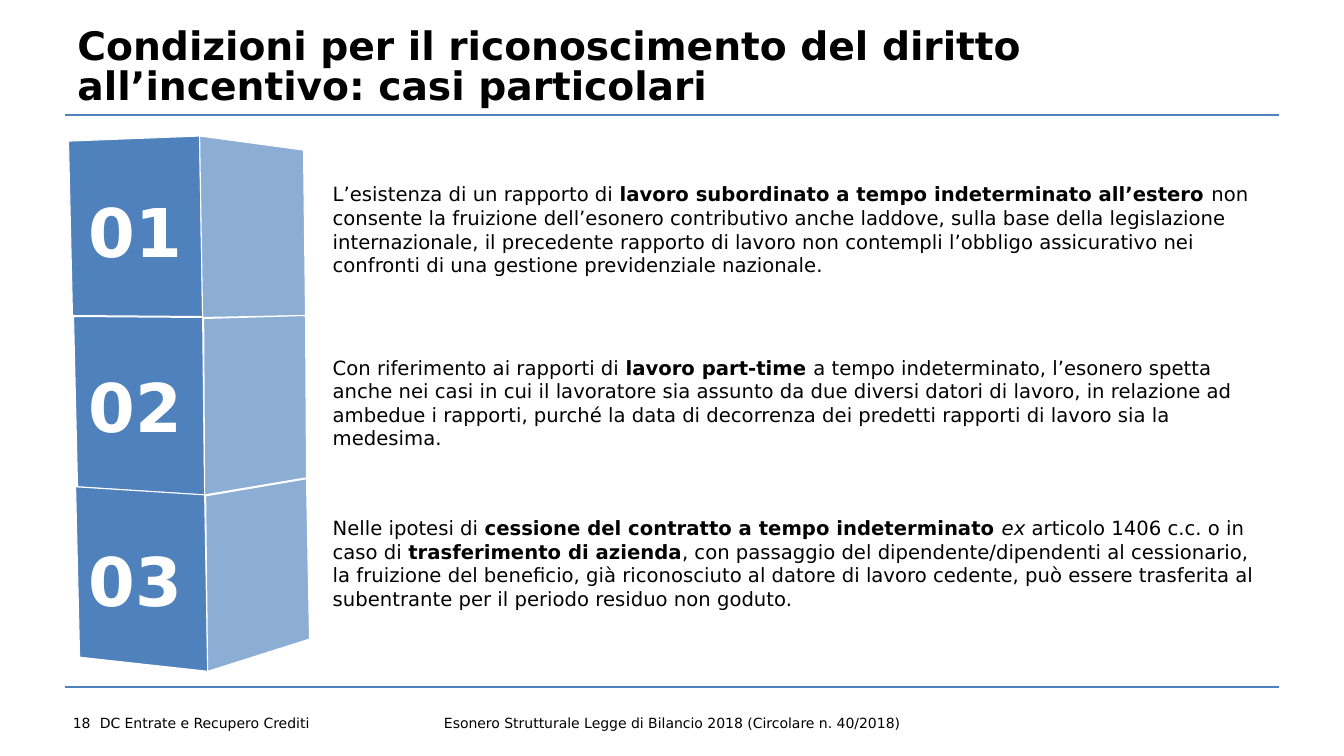
from lxml.etree import SubElement
from pptx import Presentation
from pptx.dml.color import RGBColor
from pptx.enum.shapes import MSO_CONNECTOR as Connector
from pptx.enum.text import MSO_ANCHOR as Anchor, PP_ALIGN as Align
from pptx.oxml.ns import qn
from pptx.util import Inches, Pt

BLUE = RGBColor(0x4F, 0x81, 0xBD)
LIGHT_BLUE = RGBColor(0x79, 0x9F, 0xCD)
WHITE = RGBColor(0xFF, 0xFF, 0xFF)
BLACK = RGBColor(0, 0, 0)
FONT = "DejaVu Sans"

BOLD = {"bold": True}
ITALIC = {"italic": True}

FRONT_FACES = [
    [(0.68, 1.4), (1.98, 1.35), (2.01, 3.14), (0.72, 3.13)],
    [(0.73, 3.14), (2.01, 3.15), (2.03, 4.91), (0.77, 4.83)],
    [(0.75, 4.83), (2.03, 4.91), (2.06, 6.66), (0.79, 6.52)],
]
SIDE_FACES = [
    [(1.98, 1.35), (3.01, 1.49), (3.03, 3.13), (2.01, 3.15)],
    [(2.03, 4.91), (3.04, 4.74), (3.03, 3.13), (2.02, 3.16)],
    [(2.04, 4.92), (3.04, 4.75), (3.07, 6.34), (2.06, 6.66)],
]
CASES = [
    (1.81, [
        ("L’esistenza di un rapporto di ", {}),
        ("lavoro subordinato a tempo indeterminato all’estero ", BOLD),
        ("non consente la fruizione dell’esonero contributivo anche laddove, "
         "sulla base della legislazione internazionale, il precedente rapporto "
         "di lavoro non contempli l’obbligo assicurativo nei confronti di una "
         "gestione previdenziale nazionale.", {}),
    ]),
    (3.53, [
        ("Con riferimento ai rapporti di ", {}),
        ("lavoro part-time ", BOLD),
        ("a tempo indeterminato, l’esonero spetta anche nei casi in cui il "
         "lavoratore sia assunto da due diversi datori di lavoro, in relazione "
         "ad ambedue i rapporti, purché la data di decorrenza dei predetti "
         "rapporti di lavoro sia la medesima.", {}),
    ]),
    (5.12, [
        ("Nelle ipotesi di ", {}),
        ("cessione del contratto a tempo indeterminato ", BOLD),
        ("ex ", ITALIC),
        ("articolo 1406 c.c. o in caso di ", {}),
        ("trasferimento di azienda", BOLD),
        (", con passaggio del dipendente/dipendenti al cessionario, la "
         "fruizione del beneficio, già riconosciuto al datore di lavoro "
         "cedente, può essere trasferita al subentrante per il periodo residuo "
         "non goduto.", {}),
    ]),
]
FOOTERS = [
    ("18", (0.67, 6.99, 0.28, 0.36), (0, 0), Align.CENTER),
    ("DC Entrate e Recupero Crediti", (0.95, 7.05, 3.07, 0.24),
     (0.04, 0.04), Align.LEFT),
    ("Esonero Strutturale Legge di Bilancio 2018 (Circolare n. 40/2018)",
     (4.3, 7.05, 4.73, 0.24), (0.04, 0.04), Align.CENTER),
]


def set_all(target, values):
    for name, value in values.items():
        setattr(target, name, value)


def add_text(slide, place, runs, size, color=BLACK, insets=(0, 0),
             paragraph_format=None, **frame_format):
    frame = slide.shapes.add_textbox(*map(Inches, place)).text_frame
    side, edge = map(Inches, insets)
    set_all(frame, {"word_wrap": True, "margin_left": side,
                    "margin_right": side, "margin_top": edge,
                    "margin_bottom": edge, **frame_format})
    paragraph = frame.paragraphs[0]
    set_all(paragraph, paragraph_format or {})
    for words, style in runs:
        run = paragraph.add_run()
        run.text = words
        set_all(run.font, {"name": FONT, "size": Pt(size), **style})
        run.font.color.rgb = color


def add_rule(slide, top):
    rule = slide.shapes.add_connector(
        Connector.STRAIGHT, Inches(0.64), Inches(top), Inches(12.69), Inches(top))
    rule.line.color.rgb = BLUE
    rule.line.width = Pt(1.5)
    SubElement(rule._element.spPr, qn("a:effectLst"))


def add_face(slide, corners, color, opacity=100):
    start, *others = [(Inches(x), Inches(y)) for x, y in corners]
    outline = slide.shapes.build_freeform(*start)
    outline.add_line_segments(others, close=True)
    face = outline.convert_to_shape()
    face.shadow.inherit = False
    face.fill.solid()
    face.fill.fore_color.rgb = color
    face.line.color.rgb = WHITE
    face.line.width = Pt(0.75)
    if opacity < 100:
        tint = face._element.spPr.find(qn("a:solidFill")).find(qn("a:srgbClr"))
        SubElement(tint, qn("a:alpha"), val=str(opacity * 1000))


def main():
    deck = Presentation()
    deck.slide_width, deck.slide_height = Inches(13.33), Inches(7.5)
    slide = deck.slides.add_slide(deck.slide_layouts[6])

    for top in (6.82, 1.14):
        add_rule(slide, top)
    for words, place, insets, alignment in FOOTERS:
        add_text(slide, place, [(words, {})], 10, insets=insets,
                 paragraph_format={"alignment": alignment},
                 vertical_anchor=Anchor.MIDDLE)

    for corners in FRONT_FACES:
        add_face(slide, corners, BLUE)
    for corners in SIDE_FACES:
        add_face(slide, corners, LIGHT_BLUE, opacity=85)

    add_text(slide, (0.67, 0.22, 12.01, 0.92),
             [("Condizioni per il riconoscimento del diritto "
               "all’incentivo: casi particolari", BOLD)],
             28, insets=(0.1, 0.05), paragraph_format={"line_spacing": 0.85},
             vertical_anchor=Anchor.MIDDLE)
    for index, (top, runs) in enumerate(CASES):
        add_text(slide, (0.78, 1.83 + 1.735 * index, 1.16, 0.91),
                 [(f"{index + 1:02}", BOLD)], 48, WHITE, (0.1, 0.05),
                 word_wrap=False, vertical_anchor=Anchor.MIDDLE)
        add_text(slide, (3.3, top, 9.23, 0.94), runs, 14)

    deck.save("out.pptx")


if __name__ == "__main__":
    main()
